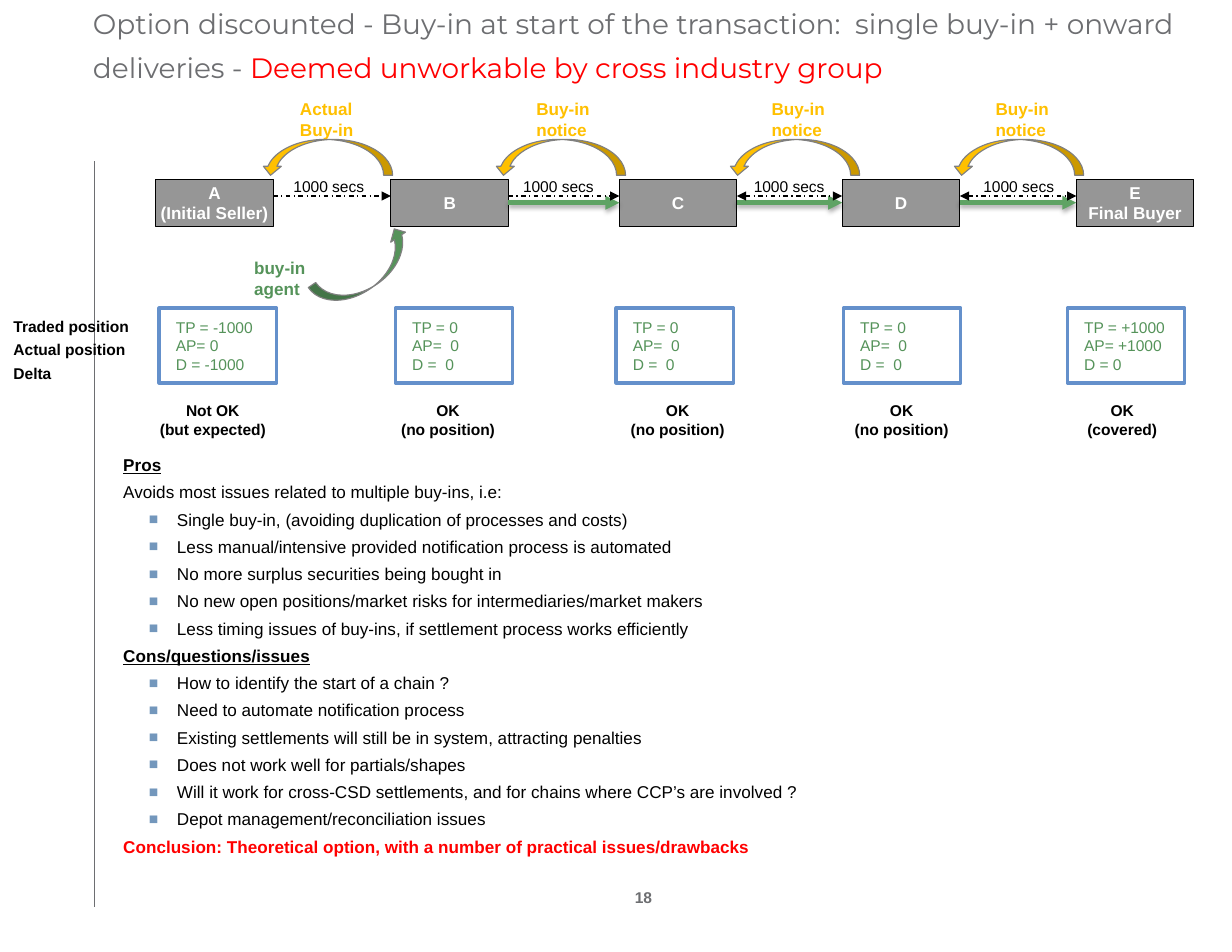
from lxml.etree import SubElement
from pptx import Presentation
from pptx.dml.color import RGBColor
from pptx.enum.dml import MSO_LINE
from pptx.enum.shapes import MSO_CONNECTOR, MSO_SHAPE
from pptx.enum.text import MSO_ANCHOR, MSO_AUTO_SIZE, PP_ALIGN
from pptx.oxml.ns import qn
from pptx.util import Inches, Pt

BLACK = RGBColor(0x00, 0x00, 0x00)
WHITE = RGBColor(0xFF, 0xFF, 0xFF)
RED = RGBColor(0xFF, 0x00, 0x00)
SLATE = RGBColor(0x6D, 0x6E, 0x71)
PARTY_GREY = RGBColor(0x96, 0x96, 0x96)
EDGE_GREY = RGBColor(0x80, 0x80, 0x80)
GOLD = RGBColor(0xFF, 0xC0, 0x00)
GREEN = RGBColor(0x55, 0x93, 0x5A)
DELIVERY_GREEN = RGBColor(0x5F, 0xA3, 0x64)
CARD_BLUE = RGBColor(0x64, 0x90, 0xCB)
BULLET_BLUE = RGBColor(0x73, 0x97, 0xBC)

PARTY_WIDTH = 1.05
PARTIES = [
    (1.39, ["A", "(Initial Seller)"]),
    (3.49, ["B"]),
    (5.53, ["C"]),
    (7.52, ["D"]),
    (9.61, ["E", "Final Buyer"]),
]
LINKS = [
    (2.56, 2.58, 2.76, "Actual Buy-in", False),
    (4.61, 4.69, 4.84, "Buy-in notice", False),
    (6.67, 6.79, 6.93, "Buy-in notice", True),
    (8.72, 8.79, 8.93, "Buy-in notice", True),
]
FLAT = ["TP = 0", "AP=  0", "D =  0"]
POSITIONS = [
    (1.42, ["TP = -1000", "AP= 0", "D = -1000"], 1.9, ["Not OK", "(but expected)"]),
    (3.53, FLAT, 4, ["OK", "(no position)"]),
    (5.5, FLAT, 6.05, ["OK", "(no position)"]),
    (7.53, FLAT, 8.05, ["OK", "(no position)"]),
    (9.53, ["TP = +1000", "AP= +1000", "D = 0"], 10.02, ["OK", "(covered)"]),
]
PROS = [
    "Single buy-in, (avoiding duplication of processes and costs)",
    "Less manual/intensive provided notification process is automated",
    "No more surplus securities being bought in",
    "No new open positions/market risks for intermediaries/market makers",
    "Less timing issues of buy-ins, if settlement process works efficiently",
]
CONS = [
    "How to identify the start of a chain ?",
    "Need to automate notification process",
    "Existing settlements will still be in system, attracting penalties",
    "Does not work well for partials/shapes",
    "Will it work for cross-CSD settlements, and for chains where CCP’s are involved ?",
    "Depot management/reconciliation issues",
]


def place(part, left, top, width, height):
    part.left, part.top = Inches(left), Inches(top)
    part.width, part.height = Inches(width), Inches(height)


def add_run(paragraph, words, size, color, bold=False, font="Arial"):
    run = paragraph.add_run()
    run.text = words
    run.font.name, run.font.size, run.font.bold = font, Pt(size), bold
    run.font.color.rgb = color
    return run


def set_margins(frame, left=0, top=0, right=0, bottom=0):
    frame.margin_left, frame.margin_top = Inches(left), Inches(top)
    frame.margin_right, frame.margin_bottom = Inches(right), Inches(bottom)


def write_lines(frame, lines, size, color, bold=False, align=PP_ALIGN.LEFT, gap=0):
    for number, words in enumerate(lines):
        paragraph = frame.add_paragraph() if number else frame.paragraphs[0]
        paragraph.alignment = align
        paragraph.space_before = Pt(gap if number else 0)
        add_run(paragraph, words, size, color, bold)


def add_label(slide, box, lines, size, color, bold=False, align=PP_ALIGN.CENTER, gap=0):
    frame = slide.shapes.add_textbox(*map(Inches, box)).text_frame
    frame.word_wrap = False
    frame.auto_size = MSO_AUTO_SIZE.SHAPE_TO_FIT_TEXT
    set_margins(frame)
    write_lines(frame, lines, size, color, bold, align, gap)
    return frame


def add_caption(slide, left, top, lines, color):
    frame = slide.shapes.add_textbox(Inches(left), Inches(top), Inches(0.75), Inches(0.47)).text_frame
    frame.word_wrap = True
    write_lines(frame, lines, 11, color, True)


def add_block(slide, kind, box, fill, edge, weight):
    block = slide.shapes.add_shape(kind, *map(Inches, box))
    block.shadow.inherit = False
    block.fill.solid()
    block.fill.fore_color.rgb = fill
    block.line.color.rgb = edge
    block.line.width = Pt(weight)
    block.text_frame.vertical_anchor = MSO_ANCHOR.MIDDLE
    set_margins(block.text_frame)
    return block


def add_line(slide, start, end, color, weight, heads=(), dash=None, shadow=False):
    line = slide.shapes.add_connector(MSO_CONNECTOR.STRAIGHT, *map(Inches, start + end))
    line.line.color.rgb = color
    line.line.width = Pt(weight)
    if dash:
        line.line.dash_style = dash
    for head in heads:
        SubElement(line.line._get_or_add_ln(), qn(head), type="triangle")
    effects = SubElement(line._element.spPr, qn("a:effectLst"))
    if shadow:
        outer = SubElement(effects, qn("a:outerShdw"), blurRad=str(Pt(3.1)), dist=str(Pt(1.8)),
                           dir="5400000", rotWithShape="0")
        tint = SubElement(outer, qn("a:srgbClr"), val=str(BLACK))
        SubElement(tint, qn("a:alpha"), val="35000")
    return line


def add_curve(slide, box, angle, fill):
    add_block(slide, MSO_SHAPE.CURVED_RIGHT_ARROW, box, fill, EDGE_GREY, 0.75).rotation = angle


def add_heading(slide, left, top, width, height):
    title = slide.shapes.title
    place(title, left, top, width, height)
    frame = title.text_frame
    frame.auto_size, frame.word_wrap = MSO_AUTO_SIZE.NONE, True
    frame.vertical_anchor = MSO_ANCHOR.BOTTOM
    set_margins(frame)
    paragraph = frame.paragraphs[0]
    paragraph.alignment, paragraph.line_spacing = PP_ALIGN.LEFT, Pt(27.9)
    add_run(paragraph, "Option discounted - Buy-in at start of the transaction:  single buy-in + onward deliveries - ",
            18, SLATE, font="Montserrat")
    add_run(paragraph, "Deemed unworkable by cross industry group", 18, RED, font="Montserrat")


def add_chain(slide, top, height):
    boxes = []
    for left, lines in PARTIES:
        party = add_block(slide, MSO_SHAPE.RECTANGLE, (left, top, PARTY_WIDTH, height), PARTY_GREY, BLACK, 0.75)
        party.text_frame.word_wrap = False
        write_lines(party.text_frame, lines, 11, WHITE, True, PP_ALIGN.CENTER)
        boxes.append(party)
    for number, (amount_left, notice_left, curve_left, notice, two_way) in enumerate(LINKS):
        seller, buyer = boxes[number:number + 2]
        start, end = PARTIES[number][0] + PARTY_WIDTH, PARTIES[number + 1][0]
        if number:
            delivery = add_line(slide, (start, top + height / 2), (end, top + height / 2),
                                DELIVERY_GREEN, 3, ["a:tailEnd"], shadow=True)
            delivery.begin_connect(seller, 3)
            delivery.end_connect(buyer, 1)
        heads = ["a:headEnd", "a:tailEnd"] if two_way else ["a:tailEnd"]
        add_line(slide, (start, top + 0.15), (end, top + 0.15), BLACK, 0.75, heads, MSO_LINE.DASH_DOT)
        add_label(slide, (amount_left, top - 0.02, 0.75, 0.17), ["1000 secs"], 10, BLACK)
        add_caption(slide, notice_left, top - 0.77, [notice], GOLD)
        add_curve(slide, (curve_left, top - 0.78, 0.32, 1.17), 90, GOLD)
    add_caption(slide, 2.17, top + 0.65, ["buy-in", "agent"], GREEN)
    add_curve(slide, (3.1, top + 0.31, 0.32, 1.01), 235.7, GREEN)


def add_positions(slide, top, height):
    add_label(slide, (0.12, top + 0.08, 1.05, 0.59), ["Traded position", "Actual position", "Delta"],
              10, BLACK, True, PP_ALIGN.LEFT, 3)
    for left, lines, center, status in POSITIONS:
        card = add_block(slide, MSO_SHAPE.RECTANGLE, (left, top, PARTY_WIDTH, height), WHITE, CARD_BLUE, 2)
        set_margins(card.text_frame, left=0.15)
        write_lines(card.text_frame, lines, 10, GREEN)
        add_label(slide, (center - 0.48, top + 0.83, 0.96, 0.34), status, 10, BLACK, True)


def add_assessment(slide, left, top, width, height):
    body = slide.placeholders[1]
    place(body, left, top, width, height)
    frame = body.text_frame
    frame.auto_size, frame.word_wrap = MSO_AUTO_SIZE.NONE, True
    set_margins(frame, 0.1, 0.04, 0.04, 0.04)
    entries = [("Pros", "head"), ("Avoids most issues related to multiple buy-ins, i.e:", "plain")]
    entries += [(words, "bullet") for words in PROS]
    entries += [("Cons/questions/issues", "head")]
    entries += [(words, "bullet") for words in CONS]
    entries += [("Conclusion: Theoretical option, with a number of practical issues/drawbacks", "conclusion")]
    for number, (words, role) in enumerate(entries):
        paragraph = frame.add_paragraph() if number else frame.paragraphs[0]
        bulleted = role == "bullet"
        paragraph.level = int(bulleted)
        paragraph.line_spacing = 1.1
        paragraph.space_before = Pt(3 if number else 0)
        properties = paragraph._p.get_or_add_pPr()
        properties.set("marL", str(Inches(0.48 if bulleted else 0.25)))
        properties.set("indent", str(Inches(-0.25)))
        if bulleted:
            SubElement(SubElement(properties, qn("a:buClr")), qn("a:srgbClr"), val=str(BULLET_BLUE))
            SubElement(properties, qn("a:buSzPct"), val="92000")
            SubElement(properties, qn("a:buFont"), typeface="Arial")
            SubElement(properties, qn("a:buChar"), char="■")
        else:
            SubElement(properties, qn("a:buNone"))
        run = add_run(paragraph, words, 11, RED if role == "conclusion" else BLACK, role in ("head", "conclusion"))
        run.font.underline = role == "head"


def main():
    deck = Presentation()
    deck.slide_width, deck.slide_height = Inches(11), Inches(8.5)
    slide = deck.slides.add_slide(deck.slide_layouts[1])
    add_line(slide, (0.84, 1.44), (0.84, 8.1), SLATE, 0.35)
    add_heading(slide, 0.83, 0.08, 9.67, 0.67)
    add_assessment(slide, 1, 4, 8.84, 3.67)
    number = add_label(slide, (5.66, 7.93, 0.17, 0.17), ["18"], 10, SLATE, True)
    number.vertical_anchor = MSO_ANCHOR.MIDDLE
    add_chain(slide, 1.6, 0.42)
    add_positions(slide, 2.75, 0.67)
    deck.save("out.pptx")


if __name__ == "__main__":
    main()
